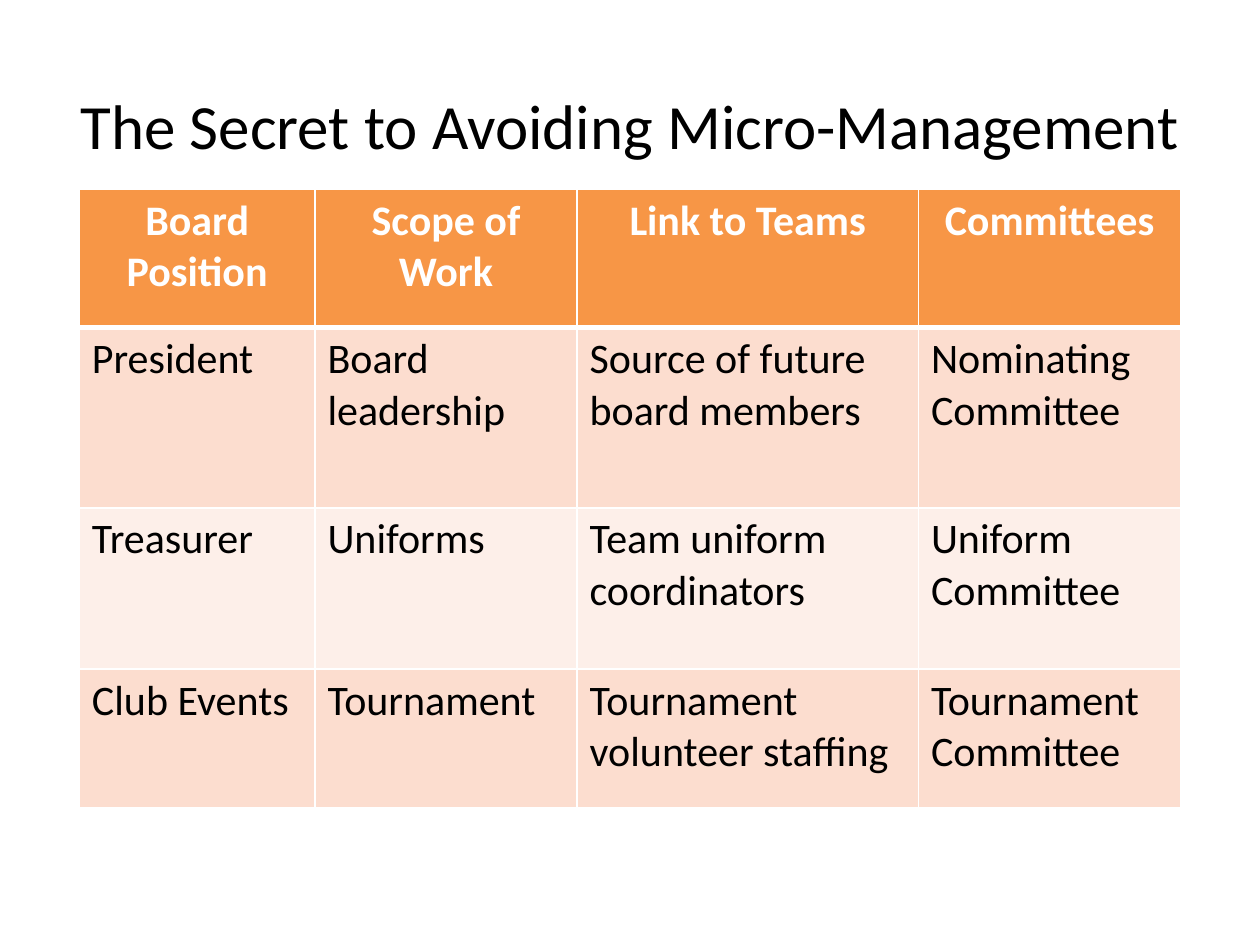
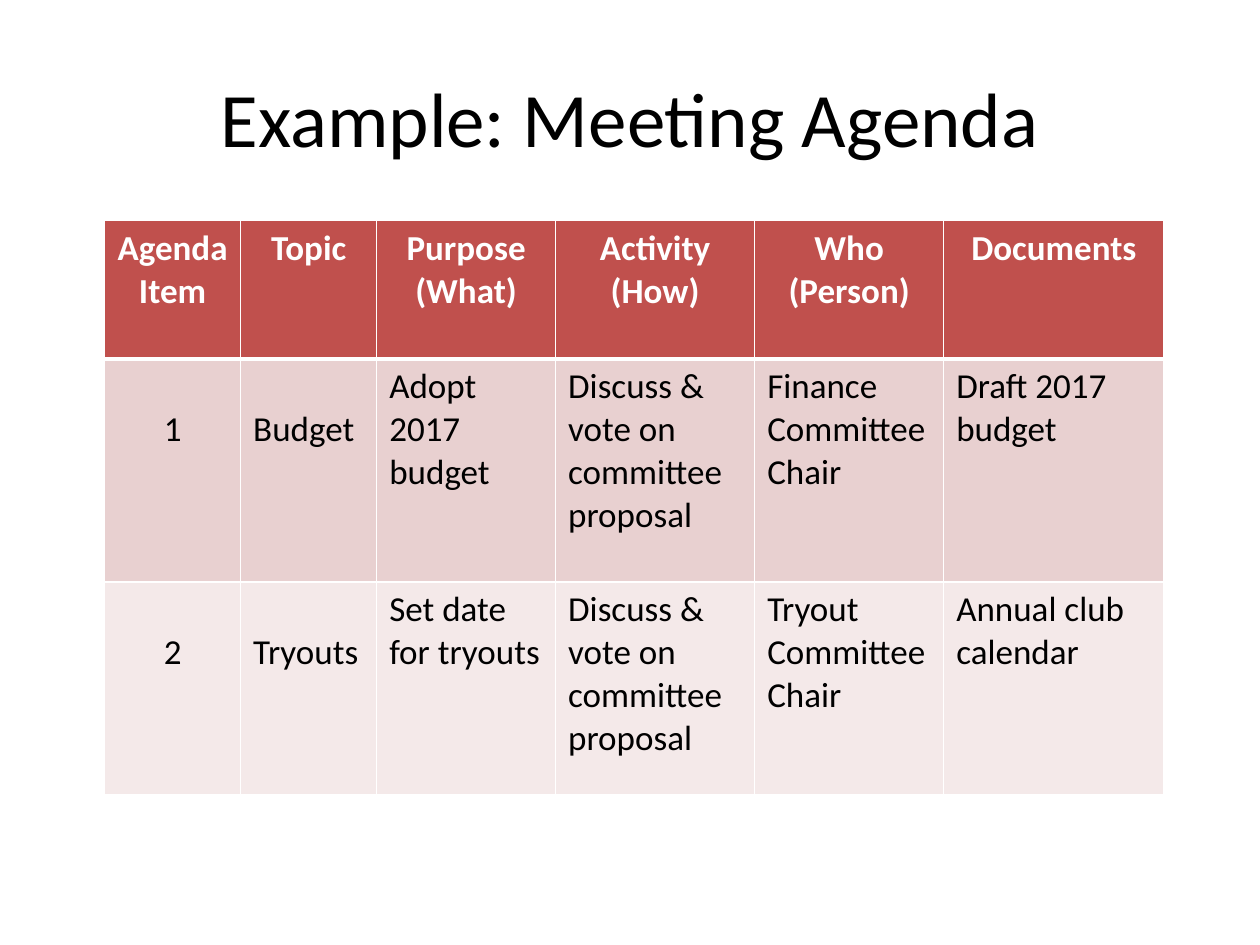
from lxml import etree
from pptx import Presentation
from pptx import util as u
from pptx.dml.color import RGBColor
from pptx.enum import text
from pptx.oxml.ns import qn

WIDTH, HEIGHT = 10, 7.5
TITLE_ONLY = 5
FONT = "Calibri"
BLACK = RGBColor(0, 0, 0)
WHITE = RGBColor(0xFF, 0xFF, 0xFF)
ORANGE = RGBColor(0xF7, 0x96, 0x46)
ORANGE_BANDS = RGBColor(0xFC, 0xDD, 0xCF), RGBColor(0xFD, 0xEF, 0xE9)
RED = RGBColor(0xC0, 0x50, 0x4D)
RED_BANDS = RGBColor(0xE8, 0xD0, 0xD0), RGBColor(0xF4, 0xE9, 0xE9)
THIN, THICK = 1, 3
CENTER, LEFT = text.PP_ALIGN.CENTER, text.PP_ALIGN.LEFT
LOWERED_TOP = 0.39

BOARD_ROLES = [
    ["Board Position", "Scope of Work", "Link to Teams", "Committees"],
    ["President", "Board leadership", "Source of future board members",
     "Nominating\nCommittee"],
    ["Treasurer", "Uniforms", "Team uniform coordinators",
     "Uniform Committee"],
    ["Club Events", "Tournament", "Tournament volunteer staffing",
     "Tournament Committee"],
]
AGENDA = [
    ["Agenda Item", "Topic", "Purpose\n(What)", "Activity (How)",
     "Who\n(Person)", "Documents"],
    ["1", "Budget", "Adopt 2017 budget",
     "Discuss &\nvote on committee proposal", "Finance Committee Chair",
     "Draft 2017 budget"],
    ["2", "Tryouts", "Set date for tryouts",
     "Discuss & vote on committee proposal", "Tryout Committee Chair",
     "Annual club calendar"],
]


def apply_format(target, values):
    for name, value in values.items():
        setattr(target, name, value)


def format_paragraphs(frame, align, size, color, bold=False):
    for paragraph in frame.paragraphs:
        paragraph.alignment = align
        apply_format(paragraph.font,
                     {"name": FONT, "size": u.Pt(size), "bold": bold})
        paragraph.font.color.rgb = color


def add_titled_slide(deck, heading, size, height):
    slide = deck.slides.add_slide(deck.slide_layouts[TITLE_ONLY])
    title = slide.shapes.title
    apply_format(title, {
        "left": u.Inches(WIDTH * 0.05), "top": u.Inches(HEIGHT * 0.04),
        "width": u.Inches(WIDTH * 0.9), "height": u.Inches(height)})
    title.text_frame.text = heading
    title.text_frame.vertical_anchor = text.MSO_ANCHOR.MIDDLE
    format_paragraphs(title.text_frame, CENTER, size, BLACK)
    return slide


def add_borders(cell, row):
    weights = {"lnL": THIN, "lnR": THIN,
               "lnT": THICK if row == 1 else THIN,
               "lnB": THICK if row == 0 else THIN}
    properties = cell._tc.get_or_add_tcPr()
    for side, weight in weights.items():
        line = etree.SubElement(properties, qn(f"a:{side}"),
                                w=str(u.Pt(weight)))
        fill = etree.SubElement(line, qn("a:solidFill"))
        etree.SubElement(fill, qn("a:srgbClr"), val=str(WHITE))


def add_grid(slide, content, left, top, widths, heights, size,
             header_color, bands, centered=(), lowered=()):
    grid = slide.shapes.add_table(
        len(heights), len(widths), u.Inches(left), u.Inches(top),
        u.Inches(sum(widths)), u.Inches(sum(heights))).table
    for column, width in zip(grid.columns, widths):
        column.width = u.Inches(width)
    for row, height in zip(grid.rows, heights):
        row.height = u.Inches(height)
    for r, entries in enumerate(content):
        header = r == 0
        for c, entry in enumerate(entries):
            cell = grid.cell(r, c)
            cell.text = entry
            add_borders(cell, r)
            cell.fill.solid()
            cell.fill.fore_color.rgb = (
                header_color if header else bands[(r - 1) % len(bands)])
            if c in lowered and not header:
                cell.margin_top = u.Inches(LOWERED_TOP)
            format_paragraphs(
                cell.text_frame, CENTER if header or c in centered else LEFT,
                size, WHITE if header else BLACK, header)


def main():
    deck = Presentation()
    deck.slide_width, deck.slide_height = u.Inches(WIDTH), u.Inches(HEIGHT)

    roles = add_titled_slide(
        deck, "The Secret to Avoiding Micro-Management", 36, 1.37)
    add_grid(roles, BOARD_ROLES, 0.63, 1.5, [1.87, 2.08, 2.71, 2.08],
             [1.1, 1.43, 1.28, 1.1], 24, ORANGE, ORANGE_BANDS)

    agenda = add_titled_slide(deck, "Example: Meeting Agenda", 44, 1.25)
    add_grid(agenda, AGENDA, 0.83, 1.75,
             [1.08, 1.08, 1.42, 1.58, 1.5, 1.75], [1.1, 1.77, 1.69],
             20, RED, RED_BANDS, centered=(0,), lowered=(0, 1))

    deck.save("out.pptx")


if __name__ == "__main__":
    main()
